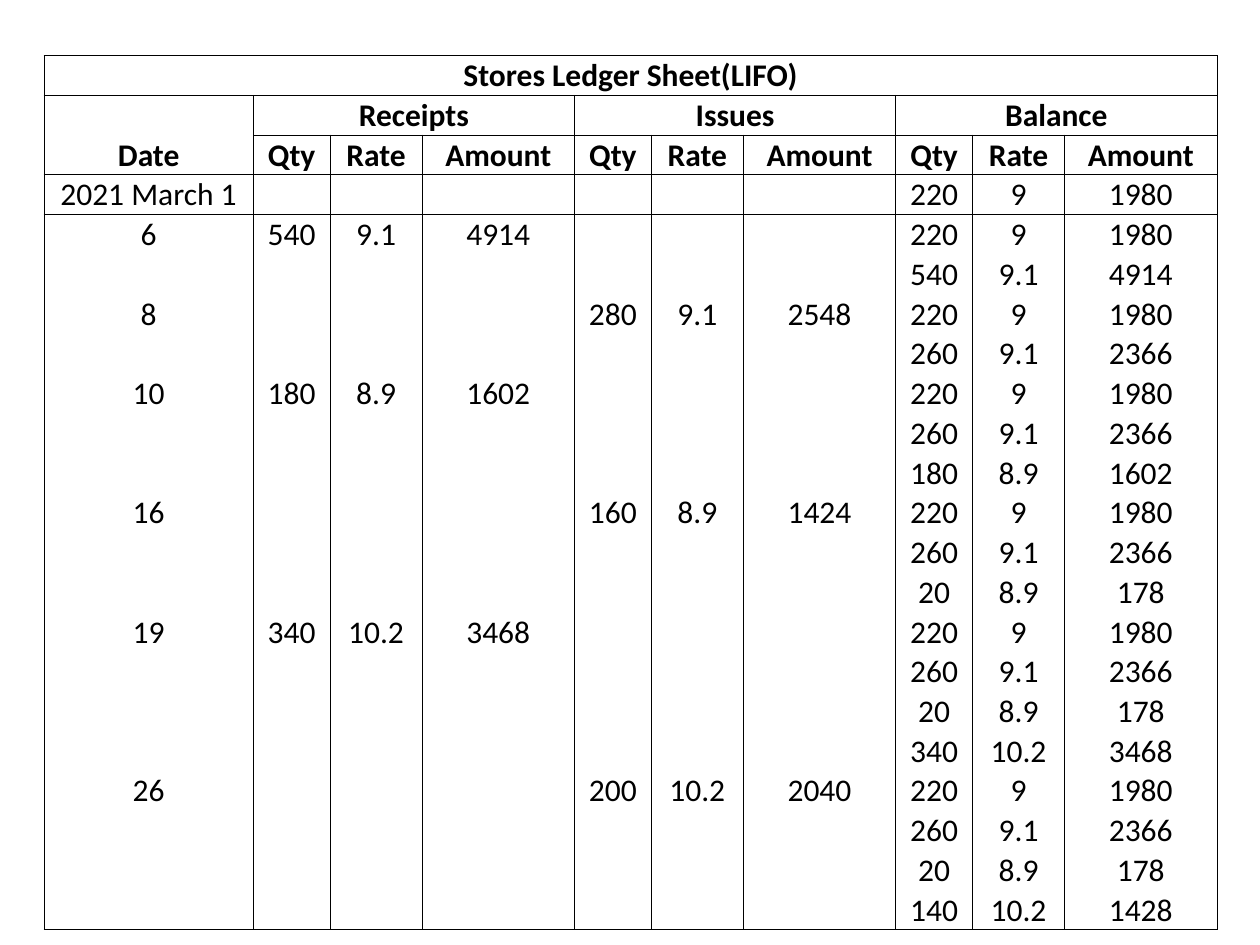
import dataclasses

import pptx
import pptx.dml.color
import pptx.enum.text
import pptx.oxml.ns
import pptx.util
from lxml import etree
from pptx.util import Inches


@dataclasses.dataclass(frozen=True)
class Theme:
    font: str = "Calibri"
    size: int = 18
    ink: str = "000000"
    line: float = 0.5
    plain_table: str = "{2D5ABB26-0587-4C30-8999-92F81FD0307C}"


THEME = Theme()
GROUPS = ["Receipts", "Issues", "Balance"]
MEASURES = ["Qty", "Rate", "Amount"]
DATE_WIDTH, MEASURE_WIDTHS = 1.66, [0.61, 0.73, 1.21]
ROW_HEIGHT = 0.31
HEADER_ROWS = 3

# Opening stock, then receipts (quantity, rate) and issues (quantity, None)
OPENING = ("2021 March 1", 220, 9)
MOVEMENTS = [
    ("6", 540, 9.1),
    ("8", 280, None),
    ("10", 180, 8.9),
    ("16", 160, None),
    ("19", 340, 10.2),
    ("26", 200, None),
]


def entry(qty, rate):
    return [str(qty), str(rate), str(round(qty * rate))]


def ledger_rows():
    """Work out the ledger lines; each issue is taken from the latest lot."""
    blank = [""] * len(MEASURES)
    date, qty, rate = OPENING
    lots = [(qty, rate)]
    rows = [[date] + blank + blank + entry(qty, rate)]
    for date, qty, rate in MOVEMENTS:
        if rate is None:
            held, rate = lots.pop()
            lots.append((held - qty, rate))
            first = [date] + blank + entry(qty, rate)
        else:
            lots.append((qty, rate))
            first = [date] + entry(qty, rate) + blank
        for i, lot in enumerate(lots):
            rows.append((first if i == 0 else [""] + blank + blank) + entry(*lot))
    return rows


def set_borders(cell, sides):
    tc_pr = cell._tc.get_or_add_tcPr()
    qn = pptx.oxml.ns.qn
    for side in sides:
        ln = etree.SubElement(tc_pr, qn(f"a:ln{side}"), w=str(pptx.util.Pt(THEME.line)))
        fill = etree.SubElement(ln, qn("a:solidFill"))
        etree.SubElement(fill, qn("a:srgbClr"), val=THEME.ink)


def format_cell(cell, sides):
    set_borders(cell, sides)
    cell.fill.background()
    cell.margin_left = cell.margin_right = cell.margin_top = Inches(0.01)
    cell.margin_bottom = 0
    cell.vertical_anchor = pptx.enum.text.MSO_ANCHOR.BOTTOM


def write_cell(cell, text, bold=False):
    p = cell.text_frame.paragraphs[0]
    p.alignment = pptx.enum.text.PP_ALIGN.CENTER
    p.font.size = pptx.util.Pt(THEME.size)
    if text:
        r = p.add_run()
        r.text = text
        r.font.name = THEME.font
        r.font.size = pptx.util.Pt(THEME.size)
        r.font.bold = bold
        r.font.color.rgb = pptx.dml.color.RGBColor.from_string(THEME.ink)


def add_grid(s, row_count):
    widths = [DATE_WIDTH] + MEASURE_WIDTHS * len(GROUPS)
    frame = s.shapes.add_table(row_count, len(widths), Inches(0.35), Inches(0.44),
                               Inches(sum(widths)), Inches(ROW_HEIGHT * row_count))
    table = frame.table
    table.first_row = table.horz_banding = False
    table._tbl.tblPr.find(pptx.oxml.ns.qn("a:tableStyleId")).text = THEME.plain_table
    for column, width in zip(table.columns, widths):
        column.width = Inches(width)

    # Full grid in the header, only column rules in the body
    for i, row in enumerate(table.rows):
        row.height = Inches(ROW_HEIGHT)
        sides = "LR"
        if i <= HEADER_ROWS:
            sides += "T"
        if i < HEADER_ROWS or i == row_count - 1:
            sides += "B"
        for cell in row.cells:
            format_cell(cell, sides)
    return table


def write_header(table):
    last = len(table.columns) - 1
    table.cell(0, 0).merge(table.cell(0, last))
    write_cell(table.cell(0, 0), "Stores Ledger Sheet(LIFO)", bold=True)
    table.cell(1, 0).merge(table.cell(2, 0))
    write_cell(table.cell(1, 0), "Date", bold=True)
    for g, group in enumerate(GROUPS):
        left = 1 + g * len(MEASURES)
        table.cell(1, left).merge(table.cell(1, left + len(MEASURES) - 1))
        write_cell(table.cell(1, left), group, bold=True)
        for m, measure in enumerate(MEASURES):
            write_cell(table.cell(2, left + m), measure, bold=True)


def main():
    prs = pptx.Presentation()
    prs.slide_width, prs.slide_height = Inches(10), Inches(7.5)
    s = prs.slides.add_slide(prs.slide_layouts[6])

    # Ledger table
    rows = ledger_rows()
    table = add_grid(s, HEADER_ROWS + len(rows))
    write_header(table)
    for i, values in enumerate(rows, HEADER_ROWS):
        for j, value in enumerate(values):
            write_cell(table.cell(i, j), value)

    prs.save("out.pptx")


if __name__ == "__main__":
    main()
